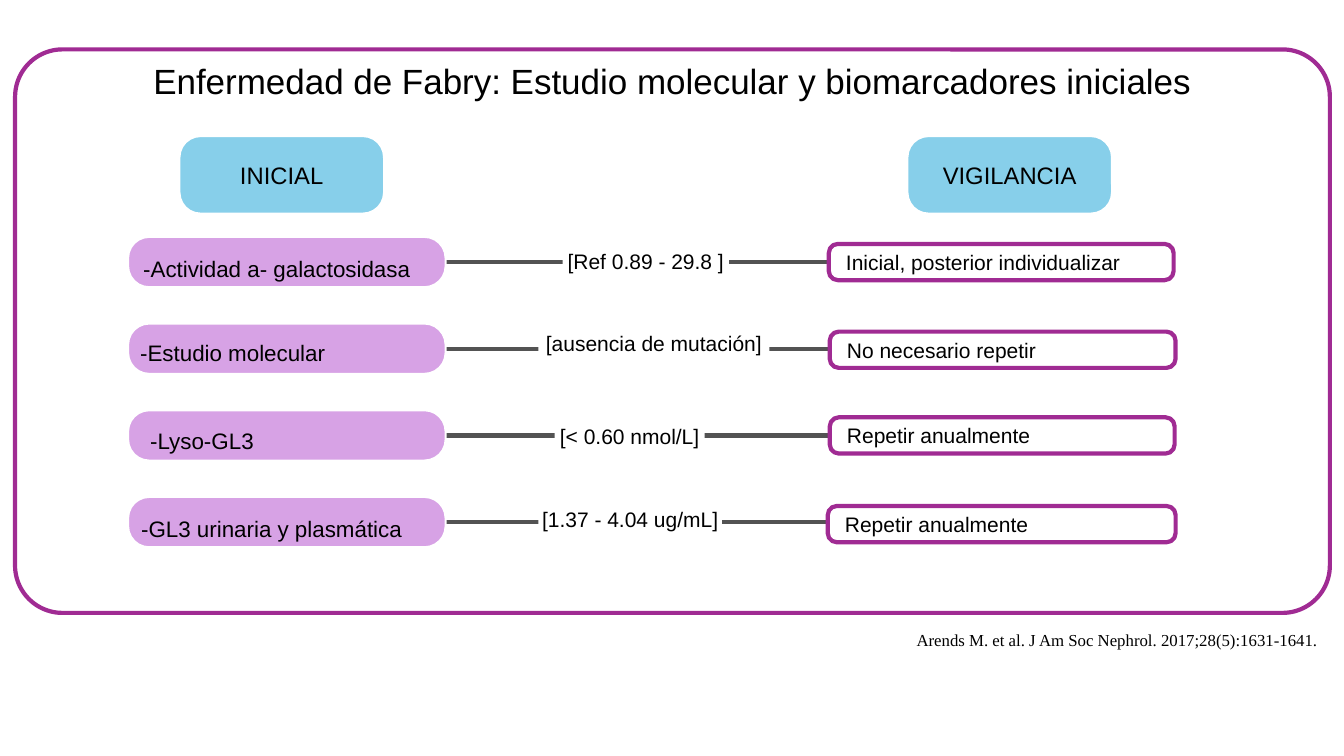
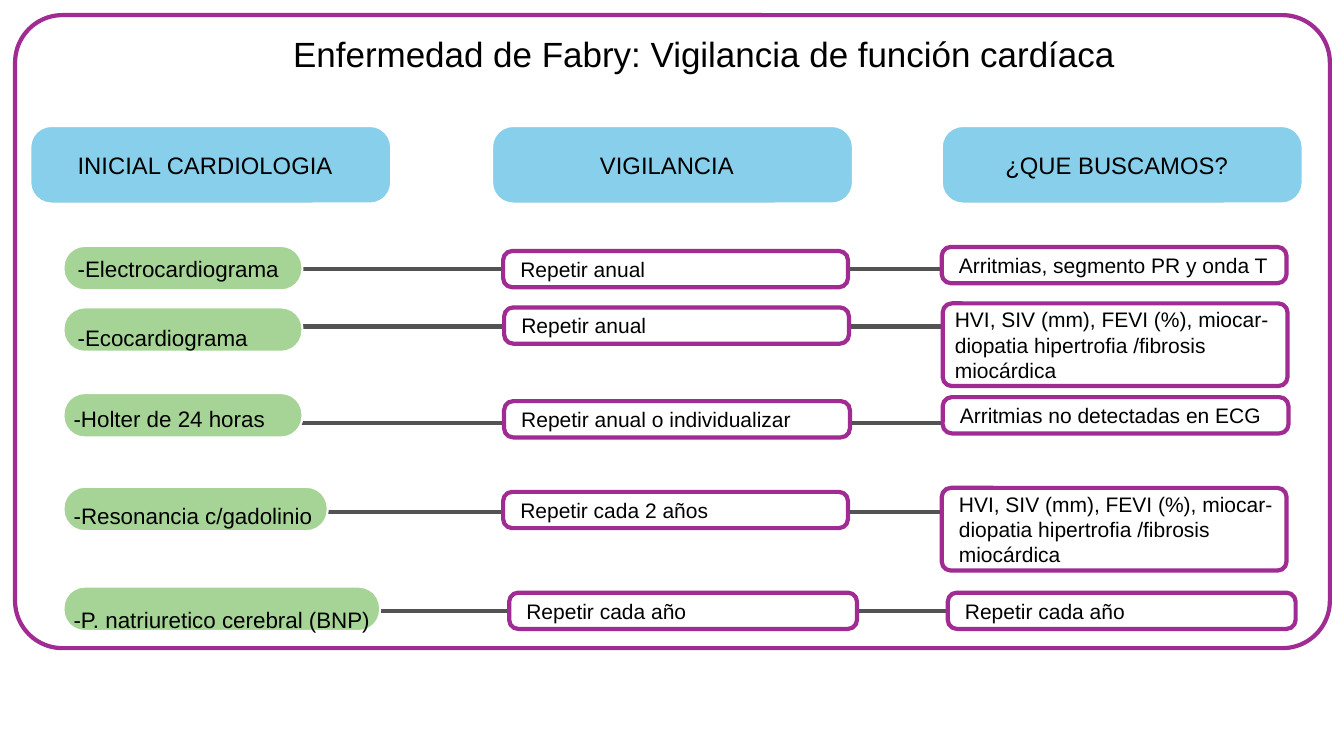
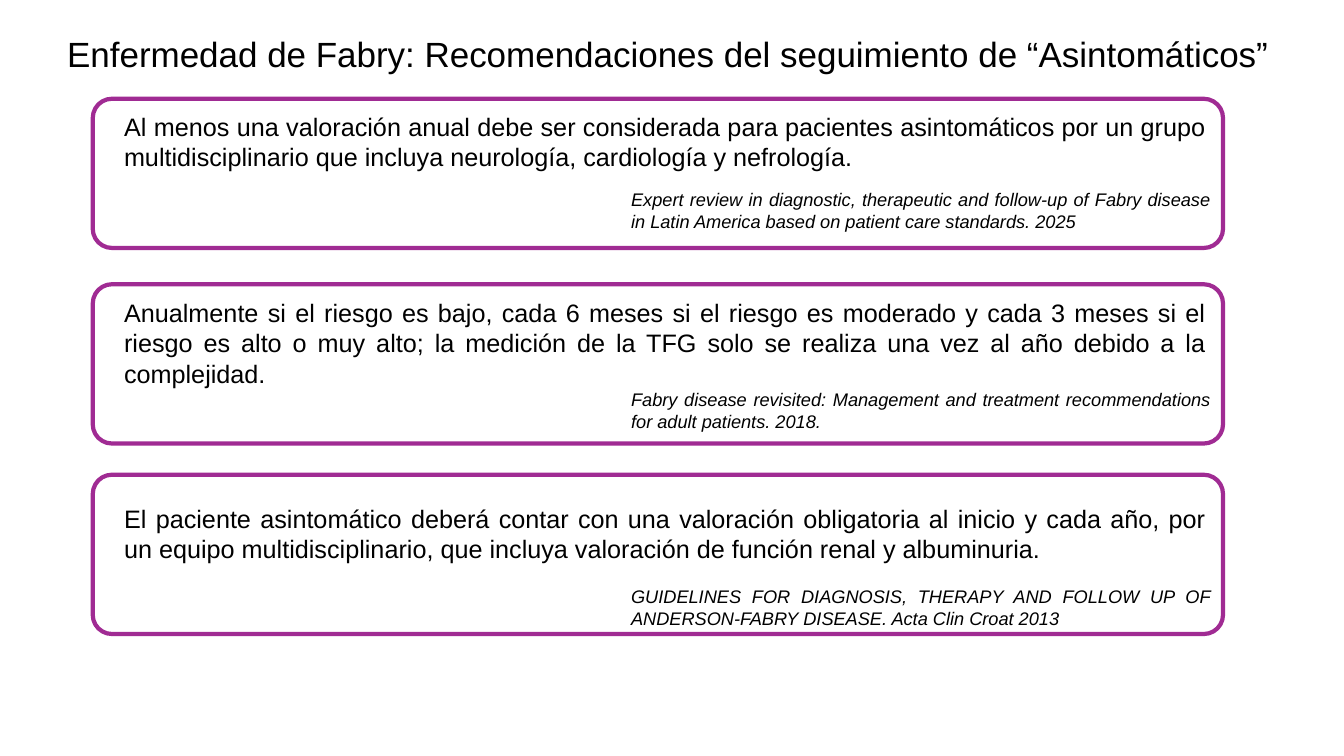
from dataclasses import dataclass

from lxml.etree import SubElement
from pptx import Presentation
from pptx.dml.color import RGBColor
from pptx.enum.shapes import MSO_CONNECTOR, MSO_SHAPE
from pptx.enum.text import MSO_ANCHOR, MSO_AUTO_SIZE, PP_ALIGN
from pptx.oxml.ns import qn
from pptx.util import Emu, Pt

EMU_PER_PX = 9144  # 100 px to the inch
SLIDE_SIZE = (1333, 750)
TITLE_ONLY = 5


@dataclass(frozen=True)
class Theme:
    purple: str = "A02B93"
    lilac: str = "D7A2E5"
    green: str = "A6D396"
    blue: str = "87CFEA"
    gray: str = "535353"
    white: str = "FFFFFF"
    black: str = "000000"
    font: str = "Arial"
    reference_font: str = "Times New Roman"
    title: int = 25
    body: int = 18
    header: int = 17
    label: int = 16
    card: int = 15
    citation: int = 13
    reference: int = 12
    thick: float = 3
    thin: float = 1.5
    frame_radius: int = 47
    panel_radius: int = 19
    pill_radius: int = 21
    card_radius: int = 9


THEME = Theme()
LEFT, CENTER, JUSTIFY = PP_ALIGN.LEFT, PP_ALIGN.CENTER, PP_ALIGN.JUSTIFY
TOP, MIDDLE = MSO_ANCHOR.TOP, MSO_ANCHOR.MIDDLE
CARD_INDENT = 17
HEART_FINDINGS = "HVI, SIV (mm), FEVI (%), miocar-diopatia hipertrofia /fibrosis miocárdica"

# Boxes are (left, top, width, height).
# Pills: box, label, label left, label middle. Links: left, right, y.
# Cards: text, box, text indent. Values: text, box.
MOLECULAR = {
    "title": ("Enfermedad de Fabry: Estudio molecular y biomarcadores iniciales",
              (78, 57, 1177, 45)),
    "frame": (15, 49, 1304, 559),
    "headers": [("INICIAL", (178, 135, 203, 77)), ("VIGILANCIA", (900, 135, 203, 77))],
    "header_shift": 0,
    "pill_color": THEME.lilac,
    "pills": [
        ((127, 235, 315, 50), "-Actividad a- galactosidasa", 142, 266),
        ((127, 321, 315, 50), "-Estudio molecular", 139, 350),
        ((127, 407, 315, 50), "-Lyso-GL3", 149, 437),
        ((127, 493, 315, 50), "-GL3 urinaria y plasmática", 140, 524),
    ],
    "links": [(434, 834, 260 + 86 * row) for row in range(4)],
    "cards": [
        ("Inicial, posterior individualizar", (822, 242, 342, 36), CARD_INDENT),
        ("No necesario repetir", (823, 329, 343, 36), CARD_INDENT),
        ("Repetir anualmente", (823, 414, 342, 36), CARD_INDENT),
        ("Repetir anualmente", (821, 502, 345, 36), CARD_INDENT),
    ],
    "values": [
        ("[Ref 0.89 - 29.8 ]", (558, 245, 165, 29)),
        ("[ausencia de mutación]", (534, 326, 229, 29)),
        ("[< 0.60 nmol/L]", (550, 418, 149, 29)),
        ("[1.37 - 4.04 ug/mL]", (534, 500, 182, 29)),
    ],
}
REFERENCE = ("Arends M. et al. J Am Soc Nephrol. 2017;28(5):1631-1641.",
             (904, 620, 425, 29))

CARDIAC = {
    "title": ("Enfermedad de Fabry: Vigilancia de función cardíaca", (218, 31, 960, 45)),
    "frame": (15, 15, 1304, 628),
    "headers": [
        ("INICIAL CARDIOLOGIA", (30, 125, 358, 77)),
        ("VIGILANCIA", (488, 125, 358, 77)),
        ("¿QUE BUSCAMOS?", (934, 125, 358, 77)),
    ],
    "header_shift": 11,
    "pill_color": THEME.green,
    "pills": [
        ((63, 244, 237, 44), "-Electrocardiograma", 77, 266),
        ((63, 305, 237, 44), "-Ecocardiograma", 77, 335),
        ((63, 390, 237, 44), "-Holter de 24 horas", 73, 415),
        ((63, 483, 262, 44), "-Resonancia c/gadolinio", 73, 511),
        ((63, 582, 314, 44), "-P. natriuretico cerebral (BNP)", 73, 615),
    ],
    "links": [(286, 933, 267), (286, 958, 324), (286, 933, 420),
              (315, 950, 508), (367, 976, 606)],
    "cards": [
        ("Repetir anual", (499, 249, 342, 36), CARD_INDENT),
        ("Repetir anual", (500, 305, 342, 36), CARD_INDENT),
        ("Repetir anual o individualizar", (500, 398, 343, 36), CARD_INDENT),
        ("Repetir cada 2 años", (499, 488, 342, 36), CARD_INDENT),
        ("Repetir cada año", (505, 588, 345, 36), CARD_INDENT),
        ("Arritmias, segmento PR y onda T", (934, 245, 342, 36), CARD_INDENT),
        (HEART_FINDINGS, (935, 301, 342, 82), 12),
        ("Arritmias no detectadas en ECG", (935, 394, 343, 36), CARD_INDENT),
        (HEART_FINDINGS, (934, 484, 342, 82), CARD_INDENT),
        ("Repetir cada año", (940, 588, 345, 36), CARD_INDENT),
    ],
    "values": [],
}

FOLLOW_UP_TITLE = ("Enfermedad de Fabry: Recomendaciones del seguimiento de “Asintomáticos”",
                   (36, 31, 1252, 45))
# Panel top, panel height, body text top, body, citation top, citation
RECOMMENDATIONS = [
    (98, 148, 110,
     "Al menos una valoración anual debe ser considerada para pacientes asintomáticos "
     "por un grupo multidisciplinario que incluya neurología, cardiología y nefrología.",
     182,
     "Expert review in diagnostic, therapeutic and follow-up of Fabry disease in Latin "
     "America based on patient care standards. 2025"),
    (282, 158, 295,
     "Anualmente si el riesgo es bajo, cada 6 meses si el riesgo es moderado y cada 3 "
     "meses si el riesgo es alto o muy alto; la medición de la TFG solo se realiza una "
     "vez al año debido a la complejidad.",
     380,
     "Fabry disease revisited: Management and treatment recommendations for adult "
     "patients. 2018."),
    (471, 158, 499,
     "El paciente asintomático deberá contar con una valoración obligatoria al inicio y "
     "cada año, por un equipo multidisciplinario, que incluya valoración de función "
     "renal y albuminuria.",
     576,
     "GUIDELINES FOR DIAGNOSIS, THERAPY AND FOLLOW UP OF ANDERSON-FABRY DISEASE. "
     "Acta Clin Croat 2013"),
]


def px(length):
    return Emu(round(length * EMU_PER_PX))


def place(box):
    return [px(length) for length in box]


def write(shape, text, size, align=LEFT, anchor=MIDDLE, insets=(0, 0, 0, 0),
          font=THEME.font, italic=False):
    """Fill a shape with one paragraph; insets are left, top, right, bottom."""
    frame = shape.text_frame
    frame.word_wrap = True
    frame.auto_size = MSO_AUTO_SIZE.NONE
    frame.vertical_anchor = anchor
    (frame.margin_left, frame.margin_top,
     frame.margin_right, frame.margin_bottom) = place(insets)
    frame.text = text
    paragraph = frame.paragraphs[0]
    paragraph.alignment = align
    paragraph.font.name = font
    paragraph.font.size = Pt(size)
    paragraph.font.italic = italic
    paragraph.font.color.rgb = RGBColor.from_string(THEME.black)


def add_text(slide, box, text, size, **style):
    write(slide.shapes.add_textbox(*place(box)), text, size, **style)


def add_box(slide, box, radius, fill, line, width):
    shape = slide.shapes.add_shape(MSO_SHAPE.ROUNDED_RECTANGLE, *place(box))
    shape.adjustments[0] = radius / min(box[2:])
    shape.shadow.inherit = False
    shape.fill.solid()
    shape.fill.fore_color.rgb = RGBColor.from_string(fill)
    shape.line.color.rgb = RGBColor.from_string(line)
    shape.line.width = Pt(width)
    return shape


def add_outlined(slide, box, radius):
    return add_box(slide, box, radius, THEME.white, THEME.purple, THEME.thick)


def add_filled(slide, box, color):
    return add_box(slide, box, THEME.pill_radius, color, THEME.white, THEME.thin)


def inside_corner(distance, radius):
    """Inset that puts text this far from the edge of a rounded rectangle."""
    return max(0, distance - 0.29 * radius)


def add_link(slide, left, right, y):
    link = slide.shapes.add_connector(
        MSO_CONNECTOR.STRAIGHT, px(right), px(y), px(left), px(y))
    link.line.color.rgb = RGBColor.from_string(THEME.gray)
    link.line.width = Pt(THEME.thick)
    SubElement(link.element.spPr, qn("a:effectLst"))


def add_title(slide, text, box):
    """Format the title placeholder and bring it in front of the frame."""
    title = slide.shapes.title
    title.left, title.top, title.width, title.height = place(box)
    write(title, text, THEME.title, align=CENTER, insets=(3, 3, 3, 3))
    title.element.getparent().append(title.element)


def add_slide(presentation):
    return presentation.slides.add_slide(presentation.slide_layouts[TITLE_ONLY])


def build_protocol(presentation, protocol):
    slide = add_slide(presentation)
    add_outlined(slide, protocol["frame"], THEME.frame_radius)
    for link in protocol["links"]:
        add_link(slide, *link)
    for text, box in protocol["headers"]:
        write(add_filled(slide, box, THEME.blue), text, THEME.header, align=CENTER,
              insets=(0, 0, protocol["header_shift"], 0))
    for box, label, left, middle in protocol["pills"]:
        add_filled(slide, box, protocol["pill_color"])
        add_text(slide, (left, middle - 15, box[2], 30), label, THEME.label)
    for text, box, indent in protocol["cards"]:
        write(add_outlined(slide, box, THEME.card_radius), text, THEME.card,
              insets=(inside_corner(indent, THEME.card_radius), 0, 0, 0))
    for text, box in protocol["values"]:
        value = slide.shapes.add_textbox(*place(box))
        value.fill.solid()
        value.fill.fore_color.rgb = RGBColor.from_string(THEME.white)
        write(value, text, THEME.card, align=CENTER)
    add_title(slide, *protocol["title"])
    return slide


def build_follow_up(presentation):
    slide = add_slide(presentation)
    radius = THEME.panel_radius
    for top, height, body_top, body, citation_top, citation in RECOMMENDATIONS:
        panel = add_outlined(slide, (92, top, 1121, height), radius)
        distances = (31, body_top - top, 17, 0)
        write(panel, body, THEME.body, align=JUSTIFY, anchor=TOP,
              insets=[inside_corner(distance, radius) for distance in distances])
        add_text(slide, (621, citation_top, 584, 51), citation, THEME.citation,
                 align=JUSTIFY, anchor=TOP, insets=(5, 5, 5, 5), italic=True)
    add_title(slide, *FOLLOW_UP_TITLE)


def main():
    presentation = Presentation()
    presentation.slide_width, presentation.slide_height = place(SLIDE_SIZE)
    molecular = build_protocol(presentation, MOLECULAR)
    text, box = REFERENCE
    add_text(molecular, box, text, THEME.reference, anchor=TOP,
             insets=(5, 5, 5, 5), font=THEME.reference_font)
    build_protocol(presentation, CARDIAC)
    build_follow_up(presentation)
    presentation.save("out.pptx")


if __name__ == "__main__":
    main()
